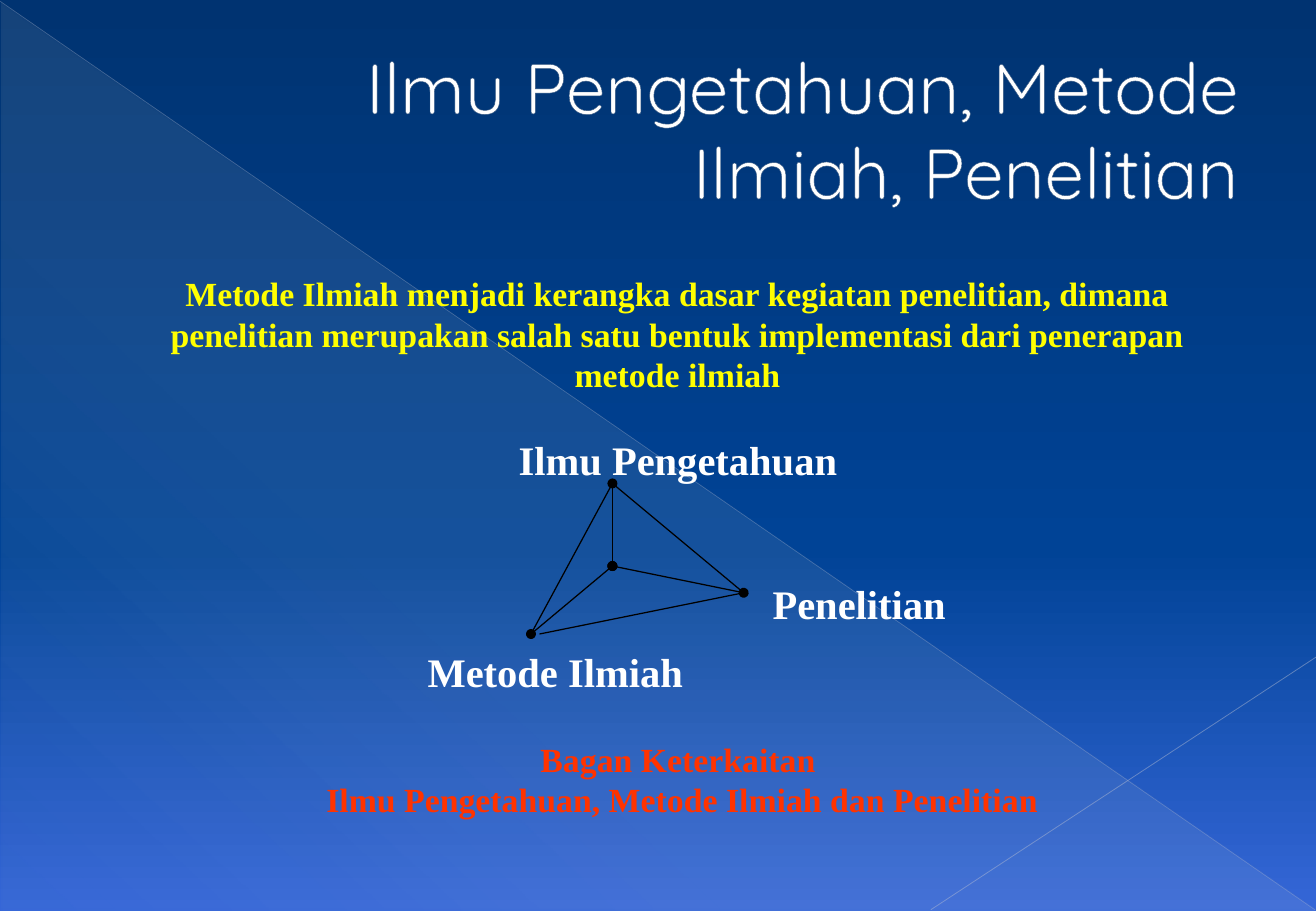
from lxml.etree import SubElement
from pptx import Presentation
from pptx.dml.color import RGBColor
from pptx.enum.shapes import MSO_CONNECTOR, MSO_SHAPE
from pptx.enum.text import MSO_ANCHOR, MSO_AUTO_SIZE, PP_ALIGN
from pptx.oxml.ns import qn
from pptx.util import Inches, Pt

NAVY = RGBColor(0x00, 0x33, 0x71)
BLUE = RGBColor(0x00, 0x43, 0x96)
LIGHT_BLUE = RGBColor(0x35, 0x66, 0xD7)
CREAM = RGBColor(0xEE, 0xEC, 0xE1)
DIAGONAL_GREY = RGBColor(0xAD, 0xB6, 0xCE)
CORNER_GREY = RGBColor(0xB6, 0xBE, 0xD3)
OUTLINE_BLUE = RGBColor(0x37, 0x59, 0x83)
WHITE = RGBColor(0xFF, 0xFF, 0xFF)
BLACK = RGBColor(0x00, 0x00, 0x00)
YELLOW = RGBColor(0xFF, 0xFF, 0x00)
RED = RGBColor(0xFF, 0x33, 0x00)
TITLE_FONT = "Quicksand"
BODY_FONT = "Times New Roman"


def add_alpha(color_element, percent):
    """Set the opacity of a colour element."""
    SubElement(color_element, qn("a:alpha"), val=str(percent * 1000))


def set_gradient(owner, stops, angle):
    """Fill the owner with (position, colour, opacity) stops at a clockwise angle."""
    owner.fill.gradient()
    gradient = next(owner_element(owner).iter(qn("a:gradFill")))
    for child in list(gradient):
        gradient.remove(child)
    stop_list = SubElement(gradient, qn("a:gsLst"))
    for position, color, opacity in stops:
        stop = SubElement(stop_list, qn("a:gs"), pos=str(position * 1000))
        add_alpha(SubElement(stop, qn("a:srgbClr"), val=str(color)), opacity)
    SubElement(gradient, qn("a:lin"), ang=str(angle * 60000), scaled="0")


def owner_element(owner):
    """Return the XML element of a shape or background."""
    return owner.element if hasattr(owner, "element") else owner._element


def add_line(slide, start, end, color, width, opacity=100, dotted_ends=False):
    """Draw a straight line, optionally with round ends."""
    line = slide.shapes.add_connector(
        MSO_CONNECTOR.STRAIGHT, *[Inches(value) for value in (*start, *end)]
    )
    line.line.color.rgb = color
    line.line.width = Pt(width)
    properties = line.element.spPr
    outline = properties.find(qn("a:ln"))
    if opacity < 100:
        add_alpha(next(outline.iter(qn("a:srgbClr"))), opacity)
    if dotted_ends:
        for end_name in ("a:headEnd", "a:tailEnd"):
            SubElement(outline, qn(end_name), type="oval")
    SubElement(properties, qn("a:effectLst"))


def add_run(paragraph, text, font_name, size, color, bold=False):
    """Append a formatted run."""
    run = paragraph.add_run()
    run.text = text
    run.font.name = font_name
    run.font.size = Pt(size)
    run.font.color.rgb = color
    run.font.bold = bold
    return run


def add_text(slide, box, lines, size, color, alignment=PP_ALIGN.LEFT, wrap=False):
    """Place bold body text, one paragraph per line."""
    text_box = slide.shapes.add_textbox(*[Inches(value) for value in box])
    frame = text_box.text_frame
    frame.word_wrap = wrap
    frame.auto_size = MSO_AUTO_SIZE.SHAPE_TO_FIT_TEXT
    for index, line in enumerate(lines):
        paragraph = frame.add_paragraph() if index else frame.paragraphs[0]
        paragraph.alignment = alignment
        add_run(paragraph, line, BODY_FONT, size, color, True)


def add_backdrop(slide, width, height):
    """Draw the background gradient, pale triangle and thin diagonals."""
    set_gradient(
        slide.background,
        [(0, NAVY, 100), (60, BLUE, 100), (100, LIGHT_BLUE, 100)],
        90,
    )
    triangle = slide.shapes.add_shape(
        MSO_SHAPE.RIGHT_TRIANGLE,
        Inches(0.01), Inches(0.02), Inches(width - 0.01), Inches(height - 0.02),
    )
    triangle.shadow.inherit = False
    triangle.line.fill.background()
    set_gradient(triangle, [(0, CREAM, 10), (70, CREAM, 8), (100, CREAM, 1)], 133)
    add_line(slide, (0, 0.01), (width - 0.01, height - 0.01), DIAGONAL_GREY, 0.39, 35)
    add_line(slide, (width, 5.41), (7.66, height - 0.01), CORNER_GREY, 0.47, 45)


def add_title(slide, box, text):
    """Fill the title placeholder with right-aligned outlined text."""
    title = slide.shapes.title
    title.left, title.top, title.width, title.height = [Inches(value) for value in box]
    frame = title.text_frame
    frame.word_wrap = True
    frame.auto_size = MSO_AUTO_SIZE.NONE
    frame.vertical_anchor = MSO_ANCHOR.MIDDLE
    paragraph = frame.paragraphs[0]
    paragraph.alignment = PP_ALIGN.RIGHT
    properties = paragraph._p.get_or_add_pPr()
    properties.set("marL", str(Inches(0.53)))
    properties.set("indent", "0")
    run = add_run(paragraph, text, TITLE_FONT, 42, WHITE)
    run_properties = run.font._element
    outline = SubElement(run_properties, qn("a:ln"), w=str(Pt(0.5)))
    SubElement(SubElement(outline, qn("a:solidFill")), qn("a:srgbClr"), val=str(OUTLINE_BLUE))
    run_properties.insert(0, outline)


def add_pyramid(slide, left, top):
    """Draw the labelled pyramid linking the three concepts."""
    labels = [
        ("Ilmu Pengetahuan", 0.75, 0, 2.85),
        ("Metode Ilmiah", 0, 1.75, 2.32),
        ("Penelitian", 2.84, 1.19, 1.64),
    ]
    for text, x, y, width in labels:
        add_text(slide, (left + x, top + y, width, 0.51), [text], 24, WHITE)
    science = (left + 1.62, top + 0.45)
    center = (left + 1.62, top + 1.13)
    method = (left + 0.95, top + 1.69)
    method_side = (left + 1.02, top + 1.69)
    research = (left + 2.7, top + 1.35)
    for start, end in ((science, center), (center, method), (center, research)):
        add_line(slide, start, end, BLACK, 0.75, dotted_ends=True)
    for start, end in ((science, method), (method_side, research), (science, research)):
        add_line(slide, start, end, BLACK, 0.75)


def main():
    """Build and save the slide."""
    width, height = 10.83, 7.5
    presentation = Presentation()
    presentation.slide_width = Inches(width)
    presentation.slide_height = Inches(height)
    slide = presentation.slides.add_slide(presentation.slide_layouts.get_by_name("Title Only"))
    add_backdrop(slide, width, height)
    add_text(
        slide,
        (0.9, 2.2, 9.35, 1.11),
        [
            "Metode Ilmiah menjadi kerangka dasar kegiatan penelitian, dimana "
            "penelitian merupakan salah satu bentuk implementasi dari penerapan "
            "metode ilmiah"
        ],
        20, YELLOW, PP_ALIGN.CENTER, True,
    )
    add_pyramid(slide, 3.42, 3.53)
    add_text(
        slide,
        (2.34, 6.03, 6.55, 0.77),
        ["Bagan Keterkaitan ", "Ilmu Pengetahuan, Metode Ilmiah dan Penelitian"],
        20, RED, PP_ALIGN.CENTER,
    )
    add_title(slide, (0.54, 0.29, 9.75, 1.53), "Ilmu Pengetahuan, Metode Ilmiah, Penelitian")
    presentation.save("out.pptx")


if __name__ == "__main__":
    main()
